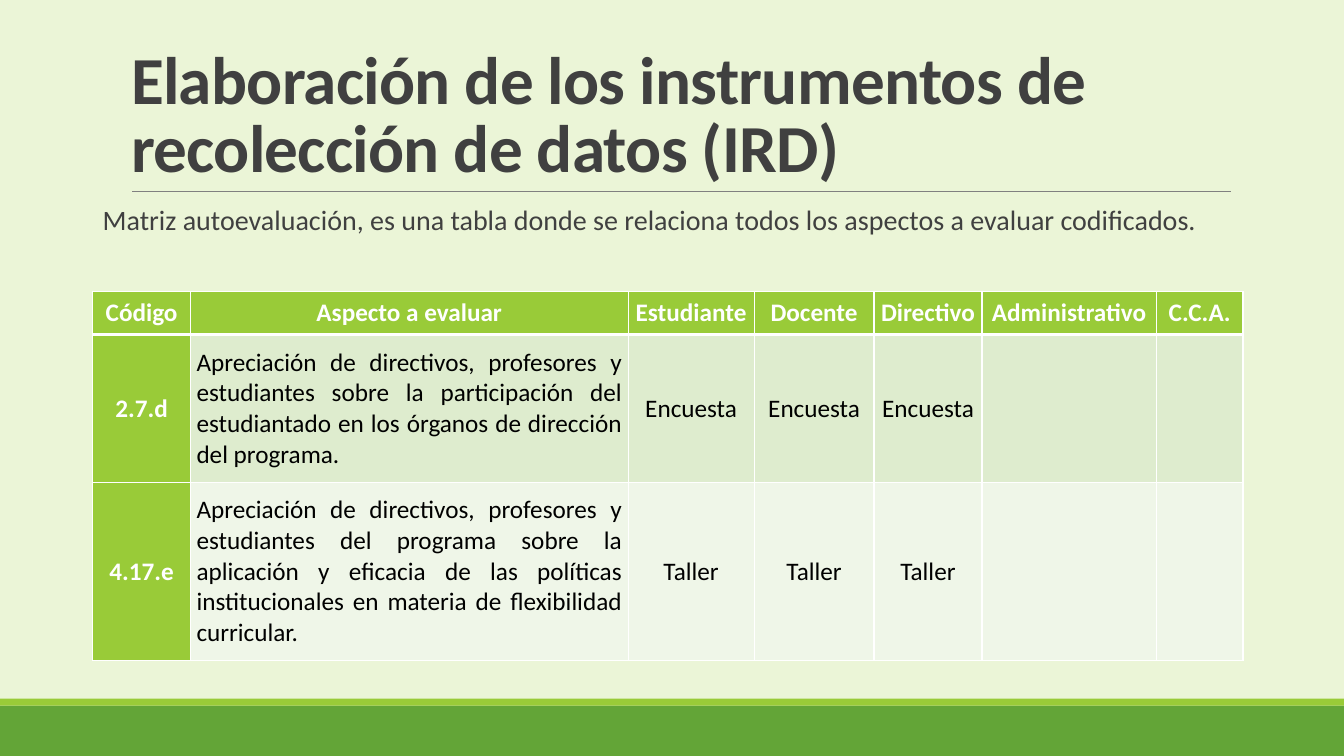
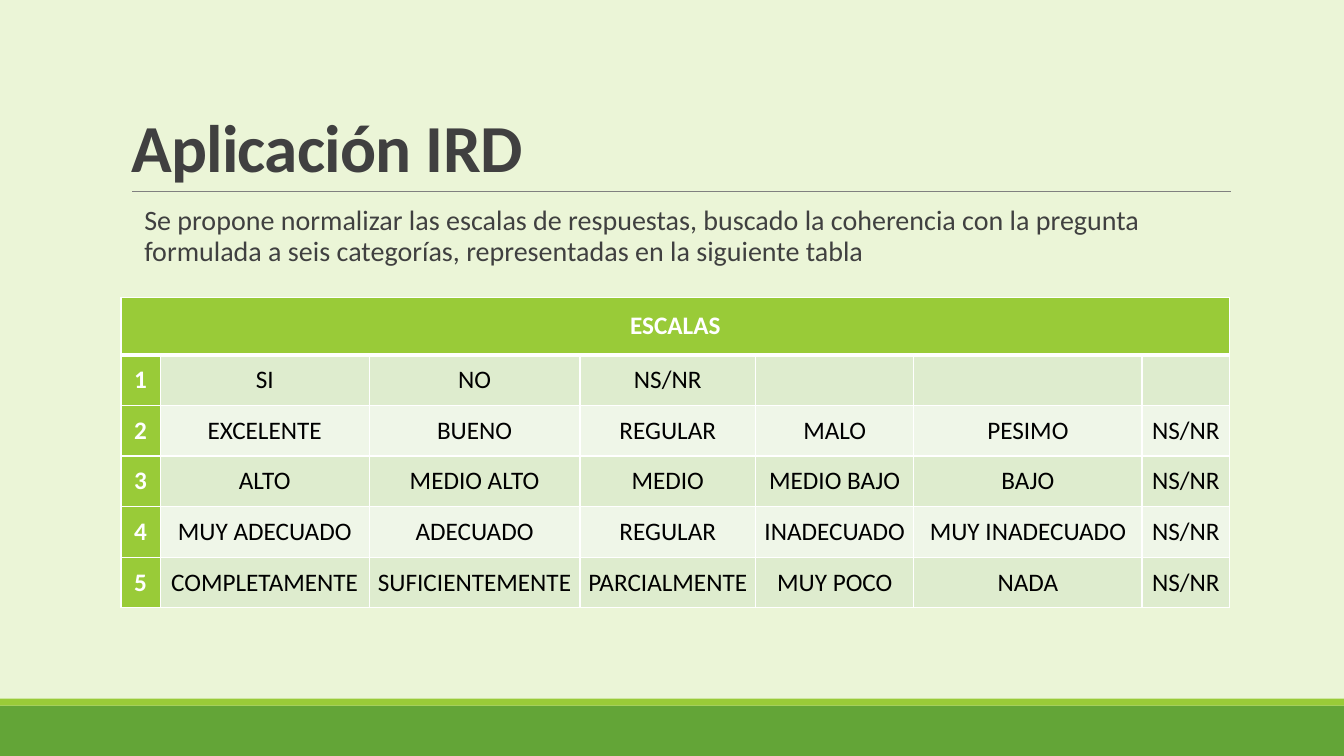
from lxml import etree
from pptx import Presentation
from pptx.dml.color import RGBColor
from pptx.enum.shapes import MSO_CONNECTOR, MSO_SHAPE
from pptx.enum.text import MSO_ANCHOR, MSO_AUTO_SIZE, PP_ALIGN
from pptx.oxml.ns import qn
from pptx.util import Inches, Pt

LINE, RECT = MSO_CONNECTOR.STRAIGHT, MSO_SHAPE.RECTANGLE
TOP, MIDDLE, BOTTOM = MSO_ANCHOR.TOP, MSO_ANCHOR.MIDDLE, MSO_ANCHOR.BOTTOM
LEFT, CENTER, JUSTIFY = PP_ALIGN.LEFT, PP_ALIGN.CENTER, PP_ALIGN.JUSTIFY
FIXED = MSO_AUTO_SIZE.NONE
PAGE, GREEN, LIME = "EBF5D7", "63A537", "99CB38"
INK, RULE, WHITE, BLACK = "404040", "808080", "FFFFFF", "000000"
STRIPES = "DEECCE", "EFF6E8"


def tint(code):
    return RGBColor.from_string(code)


class Deck:
    """Holds the style and current slide; lengths are percent of the slide."""

    def __init__(self):
        self.prs = Presentation()
        self.prs.slide_width = Inches(13.33)
        self.prs.slide_height = Inches(7.5)
        fill = self.prs.slide_master.background.fill
        fill.solid()
        fill.fore_color.rgb = tint(PAGE)

    def area(self, left, top, width, height):
        wide, high = self.prs.slide_width, self.prs.slide_height
        return [round(share * size / 100) for share, size in
                ((left, wide), (top, high), (width, wide), (height, high))]

    def style(self, para, size, color, bold=False, align=LEFT):
        para.alignment = align
        font = para.font
        font.name, font.size, font.bold = "Calibri", Pt(size), bold
        font.color.rgb = tint(color)

    def band(self, top, height, color):
        shape = self.slide.shapes.add_shape(RECT, *self.area(0, top, 100, height))
        shape.shadow.inherit = False
        shape.fill.solid()
        shape.fill.fore_color.rgb = tint(color)
        shape.line.fill.background()

    def rule(self, left, top, width):
        x, y, span, _ = self.area(left, top, width, 0)
        line = self.slide.shapes.add_connector(LINE, x, y, x + span, y)
        line.line.color.rgb = tint(RULE)
        line.line.width = Pt(0.5)
        etree.SubElement(line._element.spPr, qn("a:effectLst"))

    def label(self, shape, text, anchor, spacing):
        frame = shape.text_frame
        frame.word_wrap, frame.auto_size = True, FIXED
        frame.vertical_anchor = anchor
        frame.text = text
        para = frame.paragraphs[0]
        para.line_spacing = spacing
        return para

    def page(self, title):
        self.slide = self.prs.slides.add_slide(self.prs.slide_layouts[5])
        self.band(93.33, 6.67, GREEN)
        self.band(92.4, 0.93, LIME)
        self.rule(9.83, 25.33, 81.77)
        head = self.slide.shapes.title
        head.left, head.top, head.width, head.height = self.area(9, 4.13, 82.5, 21.2)
        para = self.label(head, title, BOTTOM, 0.85)
        self.style(para, 48, INK, True)
        para._p.get_or_add_pPr().get_or_add_defRPr().set("spc", "-50")

    def intro(self, text, left, width):
        box = self.slide.shapes.add_textbox(*self.area(left, 26.67, width, 12))
        para = self.label(box, text, TOP, 0.9)
        box.text_frame.margin_right = 0
        self.style(para, 20, INK)

    def edges(self, cell, row):
        props = cell._tc.get_or_add_tcPr()
        thick = {"T": 3 if row == 1 else 1, "B": 3 if row == 0 else 1}
        for side in "LRTB":
            line = etree.SubElement(props, qn("a:ln" + side))
            line.set("w", str(Pt(thick.get(side, 1))))
            fill = etree.SubElement(line, qn("a:solidFill"))
            etree.SubElement(fill, qn("a:srgbClr")).set("val", WHITE)

    def cell(self, cell, text, row, col, pad, align):
        self.edges(cell, row)
        key = row == 0 or col == 0
        cell.fill.solid()
        cell.fill.fore_color.rgb = tint(LIME if key else STRIPES[(row - 1) % 2])
        cell.vertical_anchor = MIDDLE
        cell.margin_left = cell.margin_right = Inches(pad)
        cell.margin_top = cell.margin_bottom = 0
        cell.text = text
        self.style(cell.text_frame.paragraphs[0], 18,
                   WHITE if key else BLACK, key, align)

    def table(self, area, cols, rows, data, pad, prose=None):
        box = self.area(*area)
        grid = self.slide.shapes.add_table(len(rows), len(cols), *box).table
        for part, size in zip(grid.columns, cols):
            part.width = round(box[2] * size / sum(cols))
        for part, size in zip(grid.rows, rows):
            part.height = round(box[3] * size / sum(rows))
        for r, line in enumerate(data):
            for c in range(len(cols)):
                text = line[c] if c < len(line) else ""
                align = JUSTIFY if r and c == prose else CENTER
                self.cell(grid.cell(r, c), text, r, c, pad, align)
        if len(data[0]) == 1:
            grid.cell(0, 0).merge(grid.cell(0, len(cols) - 1))


def main():
    deck = Deck()
    deck.page("Elaboración de los instrumentos de recolección de datos (IRD)")
    deck.intro("Matriz autoevaluación, es una tabla donde se relaciona todos los "
               "aspectos a evaluar codificados.", 6.9, 86.3)
    deck.table((6.9, 38.53, 85.6, 48.8),
               (0.97, 4.34, 1.25, 1.19, 1.07, 1.73, 0.86), (0.43, 1.47, 1.76), [
        ["Código", "Aspecto a evaluar", "Estudiante", "Docente", "Directivo",
         "Administrativo", "C.C.A."],
        ["2.7.d", "Apreciación de directivos, profesores y estudiantes sobre la "
         "participación del estudiantado en los órganos de dirección del programa.",
         *["Encuesta"] * 3],
        ["4.17.e", "Apreciación de directivos, profesores y estudiantes del programa "
         "sobre la aplicación y eficacia de las políticas institucionales en materia "
         "de flexibilidad curricular.", *["Taller"] * 3],
    ], 0.06, prose=1)

    deck.page("Aplicación IRD")
    deck.intro("Se propone normalizar las escalas de respuestas, buscado la coherencia "
               "con la pregunta formulada a seis categorías, representadas en la "
               "siguiente tabla", 10, 81.5)
    scales = [
        ["SI", "NO", "NS/NR"],
        ["EXCELENTE", "BUENO", "REGULAR", "MALO", "PESIMO", "NS/NR"],
        ["ALTO", "MEDIO ALTO", "MEDIO", "MEDIO BAJO", "BAJO", "NS/NR"],
        ["MUY ADECUADO", "ADECUADO", "REGULAR", "INADECUADO", "MUY INADECUADO",
         "NS/NR"],
        ["COMPLETAMENTE", "SUFICIENTEMENTE", "PARCIALMENTE", "MUY POCO", "NADA",
         "NS/NR"],
    ]
    data = [["ESCALAS"]] + [[str(n), *row] for n, row in enumerate(scales, 1)]
    deck.table((9, 39.33, 82.5, 41.07),
               (0.39, 2.07, 2.09, 1.74, 1.57, 2.26, 0.87),
               [0.57] + [0.5] * len(scales), data, 0.07)
    deck.prs.save("out.pptx")


if __name__ == "__main__":
    main()
